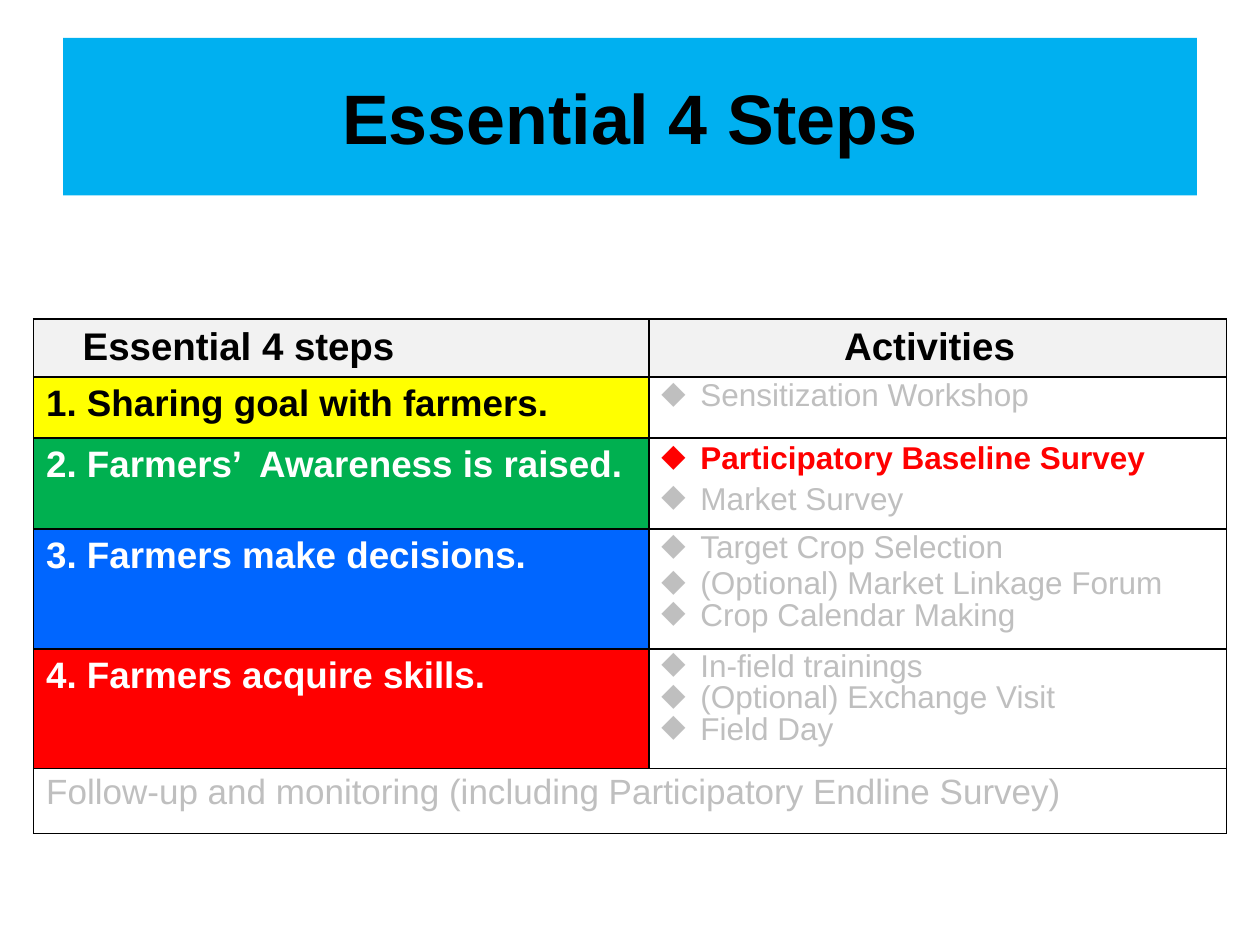
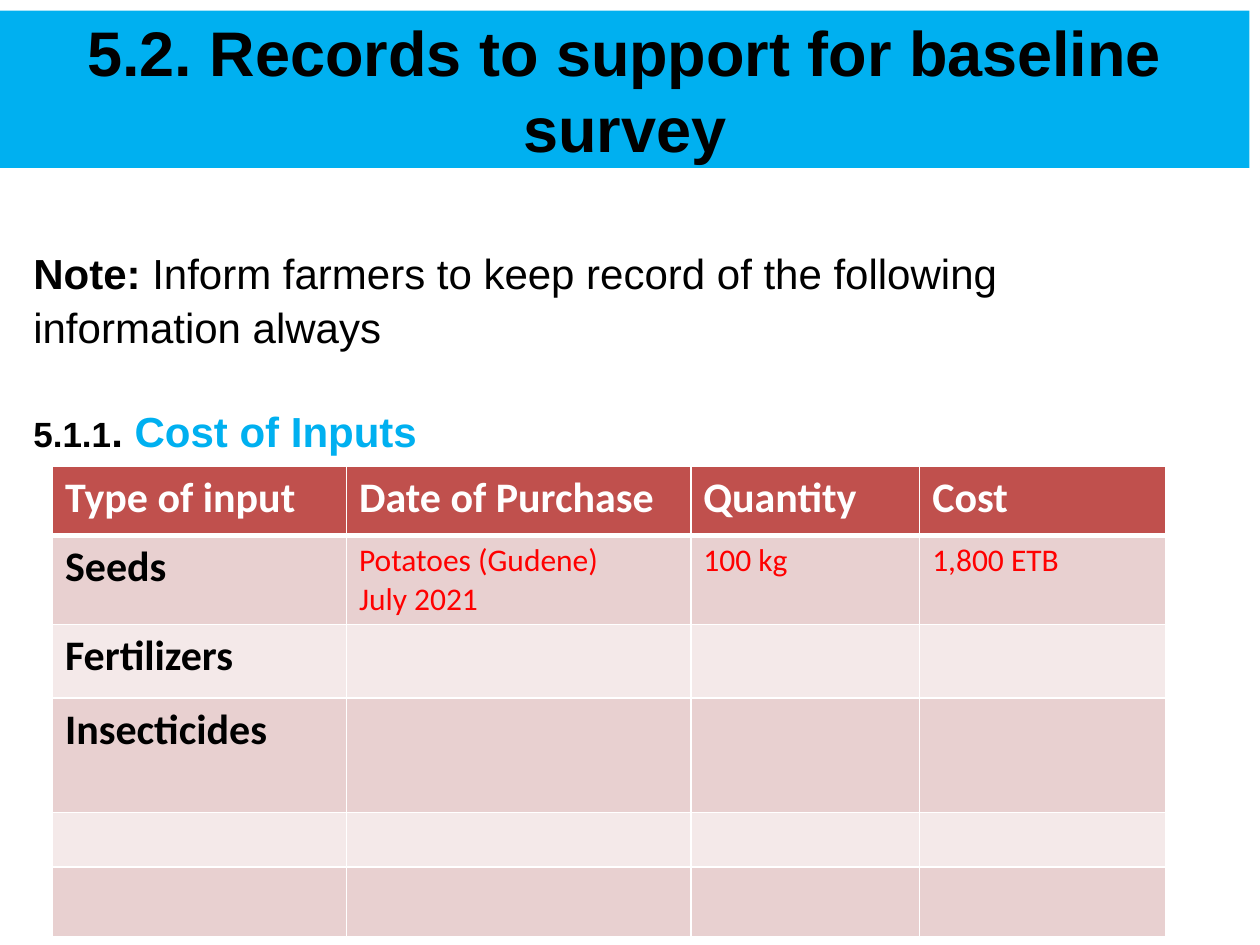
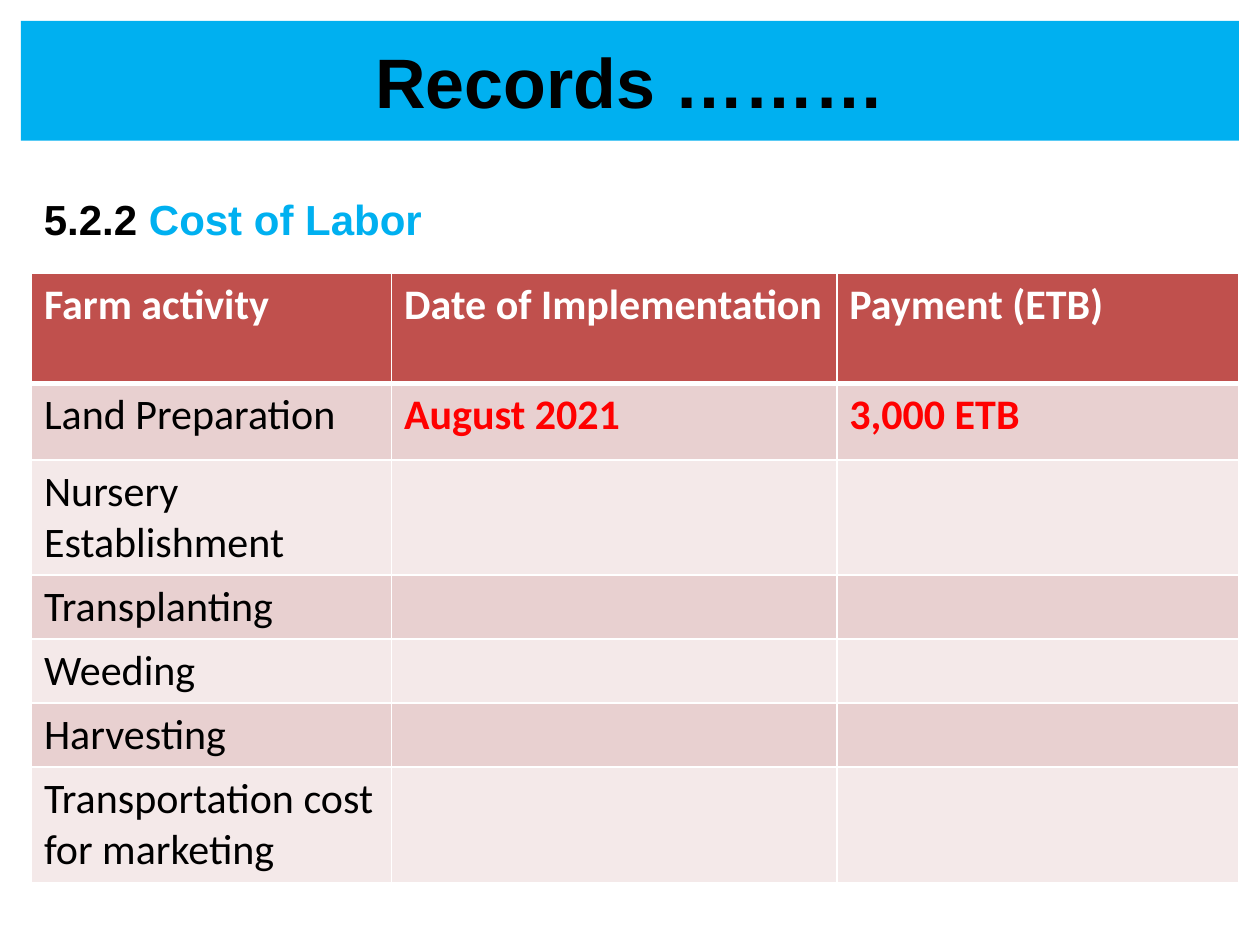
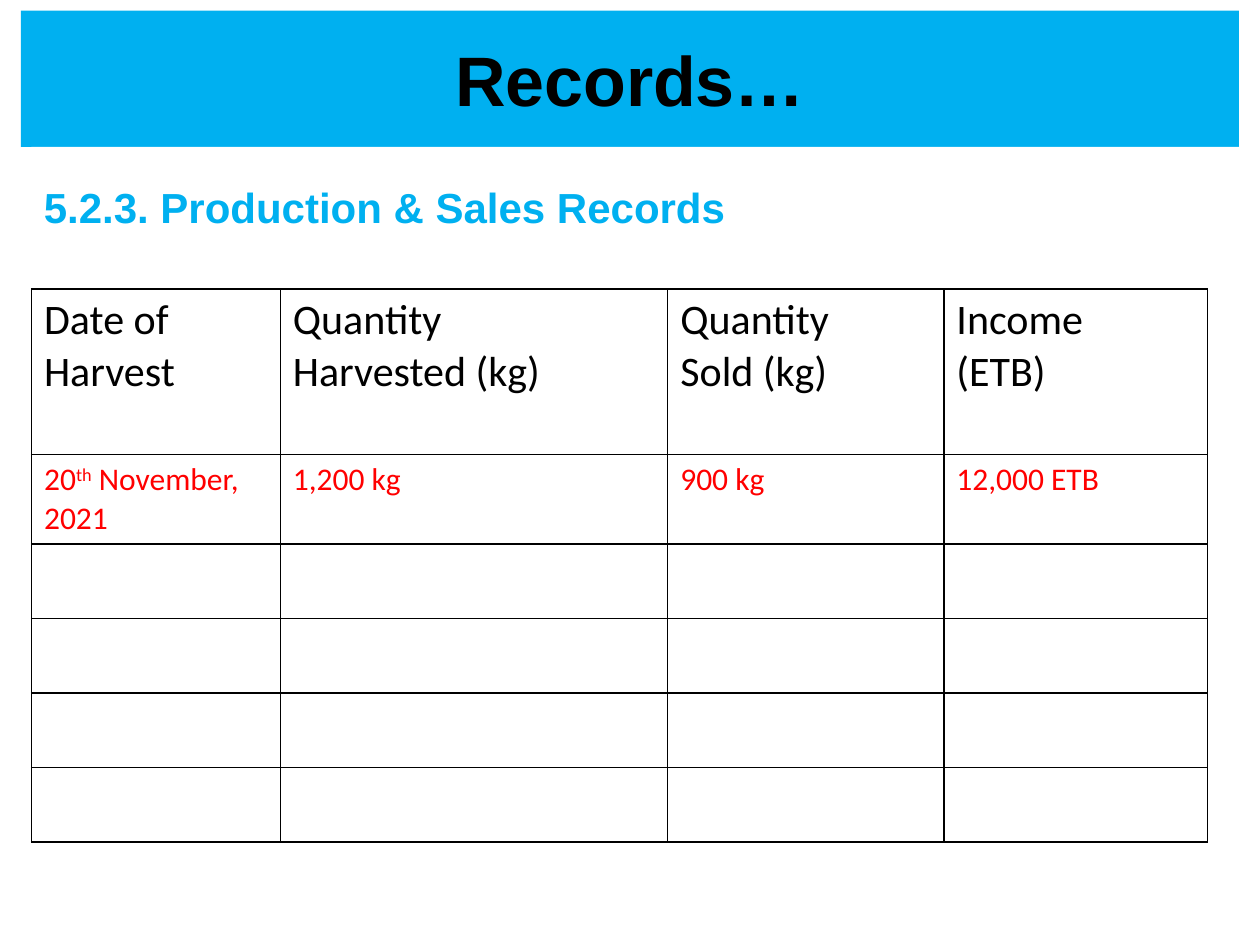
from dataclasses import dataclass

from lxml.etree import SubElement
from pptx import Presentation
from pptx.dml.color import RGBColor
from pptx.enum.shapes import MSO_SHAPE
from pptx.enum.text import MSO_ANCHOR, MSO_AUTO_SIZE, PP_ALIGN
from pptx.oxml.ns import qn
from pptx.util import Emu, Inches, Pt

GRID_COLUMNS, GRID_ROWS = 120, 90
CELL = Inches(10) / GRID_COLUMNS
TITLE_ONLY = 5


@dataclass(frozen=True)
class Theme:
    band: str = "00B0F0"
    black: str = "000000"
    white: str = "FFFFFF"
    sample: str = "FF0000"
    muted: str = "BFBFBF"
    heading_fill: str = "F2F2F2"
    header: str = "C0504D"
    stripe_dark: str = "E8D0D0"
    stripe_light: str = "F4E9E9"
    step_yellow: str = "FFFF00"
    step_green: str = "00B050"
    step_blue: str = "0066FF"
    step_red: str = "FF0000"
    title_font: str = "Arial"
    table_font: str = "Calibri"
    title: float = 40
    long_title: float = 36
    body: float = 24
    step_heading: float = 22
    step: float = 21
    note: float = 20
    small: float = 18


THEME = Theme()


def grid(units):
    return Emu(round(units * CELL))


def place(part, box):
    part.left, part.top, part.width, part.height = map(grid, box)


def paint(part, color):
    part.fill.solid()
    part.fill.fore_color.rgb = RGBColor.from_string(color)


def set_bullet(paragraph, left, hanging, symbol=None):
    properties = paragraph._p.get_or_add_pPr()
    properties.set("marL", str(Inches(left)))
    properties.set("indent", str(Inches(hanging)))
    if symbol:
        SubElement(properties, qn("a:buChar")).set("char", symbol)


def write(frame, text, *, align=PP_ALIGN.LEFT, before=0, line=None,
          indent=None, bullet=None, **font_format):
    """Add one paragraph; text is a string or a list of (string, run format)."""
    paragraph = frame.paragraphs[0]
    if paragraph.runs:
        paragraph = frame.add_paragraph()
    paragraph.alignment = align
    paragraph.space_before = Pt(before)
    if line:
        paragraph.line_spacing = line
    if indent:
        set_bullet(paragraph, *indent, bullet)
    for words, changes in [(text, {})] if isinstance(text, str) else text:
        look = {"font": THEME.title_font, "size": THEME.body,
                "color": THEME.black, "bold": False,
                **font_format, **changes}
        run = paragraph.add_run()
        run.text = words
        run.font.name = look["font"]
        run.font.size = Pt(look["size"])
        run.font.bold = look["bold"]
        run.font.color.rgb = RGBColor.from_string(look["color"])
        if look.get("superscript"):
            run._r.get_or_add_rPr().set("baseline", "30000")


def add_titled_slide(deck, title, box, size=THEME.title):
    slide = deck.slides.add_slide(deck.slide_layouts[TITLE_ONLY])
    band = slide.shapes.title
    place(band, box)
    paint(band, THEME.band)
    band.text_frame.auto_size = MSO_AUTO_SIZE.NONE
    band.text_frame.vertical_anchor = MSO_ANCHOR.MIDDLE
    write(band.text_frame, title, align=PP_ALIGN.CENTER, size=size, bold=True)
    return slide


def add_section_heading(slide, text, top_margin=0.05):
    heading = slide.shapes.add_shape(MSO_SHAPE.RECTANGLE, 0, 0, 0, 0)
    place(heading, (3, 14, 115, 11.4))
    heading.shadow.inherit = False
    paint(heading, THEME.white)
    heading.line.fill.background()
    frame = heading.text_frame
    frame.word_wrap = True
    frame.vertical_anchor = MSO_ANCHOR.MIDDLE
    frame.margin_top = Inches(top_margin)
    write(frame, text, bold=True)


def add_grid_table(slide, left, top, columns, rows):
    frame = slide.shapes.add_table(
        len(rows), len(columns), grid(left), grid(top),
        grid(sum(columns)), grid(sum(rows)))
    table = frame.table
    table.first_row = table.horz_banding = False
    for column, width in zip(table.columns, columns):
        column.width = grid(width)
    for row, height in zip(table.rows, rows):
        row.height = grid(height)
    return table


def style_cell(cell, border, fill=None, bottom=1):
    """Draw the four borders, then the fill, as the schema orders them."""
    properties = cell._tc.get_or_add_tcPr()
    for side, width in zip("LRTB", (1, 1, 1, bottom)):
        edge = SubElement(properties, qn(f"a:ln{side}"), w=str(Pt(width)))
        solid = SubElement(edge, qn("a:solidFill"))
        SubElement(solid, qn("a:srgbClr"), val=border)
    if fill:
        paint(cell, fill)
    else:
        cell.fill.background()


def fill_records(table, records, row_formats, striped=True):
    """Fill a record table; a list in records gives a cell several paragraphs."""
    for r, row in enumerate(table.rows):
        for c, cell in enumerate(row.cells):
            if not striped:
                style_cell(cell, THEME.black)
            elif r == 0:
                style_cell(cell, THEME.white, THEME.header, bottom=3)
            else:
                stripe = THEME.stripe_dark if r % 2 else THEME.stripe_light
                # The thick rule under the header belongs to both rows.
                style_cell(cell, THEME.white, stripe)
            content = records[r][c] if r < len(records) and c < len(records[r]) else []
            for paragraph in [content] if isinstance(content, str) else content:
                write(cell.text_frame, paragraph, font=THEME.table_font,
                      **row_formats(r, c))


def fill_step_cell(cell, fill=None, top_margin=0.05):
    style_cell(cell, THEME.black, fill)
    cell.margin_left = cell.margin_right = cell.margin_bottom = 0
    cell.margin_top = Inches(top_margin)


def add_steps_table(slide, left, top):
    # Each activity: words, exact line height, space before.
    steps = [
        ("1. Sharing goal with farmers.", THEME.step_yellow, THEME.black,
         [("Sensitization Workshop", 18.6, 2)]),
        ("2. Farmers’  Awareness is raised.", THEME.step_green, THEME.white,
         [("Participatory Baseline Survey", 18.6, 3.2),
          ("Market Survey", 22.9, 0)]),
        ("3. Farmers make decisions.", THEME.step_blue, THEME.white,
         [("Target Crop Selection", 18.6, 2),
          ("(Optional) Market Linkage Forum", 18.6, 2),
          ("Crop Calendar Making", 18, 0)]),
        ("4. Farmers acquire skills.", THEME.step_red, THEME.white,
         [("In-field trainings", 18, 0),
          ("(Optional) Exchange Visit", 18, 0),
          ("Field Day", 18, 0)]),
    ]
    current = "Participatory Baseline Survey"
    table = add_grid_table(slide, left, top, [58.6, 55],
                           [5.5, 5.8, 8.7, 11.4, 11.4, 6.2])
    for c, (heading, indent) in enumerate([("Essential 4 steps", 0.39),
                                           ("Activities", 1.55)]):
        cell = table.cell(0, c)
        fill_step_cell(cell, THEME.heading_fill)
        write(cell.text_frame, heading, indent=(indent, 0), before=3.1,
              size=THEME.step_heading, bold=True)
    for r, (step, fill, color, activities) in enumerate(steps, 1):
        step_cell, activity_cell = table.cell(r, 0), table.cell(r, 1)
        fill_step_cell(step_cell, fill)
        write(step_cell.text_frame, step, indent=(0.1, 0), before=3.1,
              size=THEME.step, color=color, bold=True)
        fill_step_cell(activity_cell,
                       top_margin=0.05 if activities[0][0] == current else 0.03)
        for activity, line, before in activities:
            active = activity == current
            write(activity_cell.text_frame, activity, line=Pt(line),
                  before=before, indent=(0.41, -0.31), bullet="◆",
                  size=THEME.small, bold=active,
                  color=THEME.sample if active else THEME.muted)
    last = len(steps) + 1
    follow_up = table.cell(last, 0)
    follow_up.merge(table.cell(last, 1))
    for cell in table.rows[last].cells:
        fill_step_cell(cell, top_margin=0.03)
    write(follow_up.text_frame,
          "Follow-up and monitoring (including Participatory Endline Survey)",
          indent=(0.1, 0), before=3.1, size=THEME.note, color=THEME.muted)


def add_record_note(slide, box):
    note = slide.shapes.add_textbox(0, 0, 0, 0)
    place(note, box)
    frame = note.text_frame
    frame.word_wrap = True
    frame.margin_top = Inches(0.36)
    write(frame, [("Note: ", {"bold": True}),
                  ("Inform farmers to keep record of the following information always", {})],
          line=1.06)
    write(frame, [("5.1.1", {"size": THEME.note}), (". ", {}),
                  ("Cost of Inputs", {"color": THEME.band})],
          before=29, line=1.06, bold=True)


def build_steps_slide(deck):
    slide = add_titled_slide(deck, "Essential 4 Steps", (6, 3.6, 108, 15))
    add_steps_table(slide, 3.2, 30.4)


def build_inputs_slide(deck):
    def look(r, c):
        if r == 0:
            return {"color": THEME.white, "bold": True}
        if c == 0:
            return {"bold": True}
        return {"color": THEME.sample, "size": THEME.small}

    slide = add_titled_slide(deck, "5.2. Records to support for baseline survey",
                             (0, 1, 119, 15), THEME.long_title)
    add_record_note(slide, (2, 19, 114, 65.4))
    table = add_grid_table(slide, 5, 44.4, [28, 32.8, 21.8, 23.4],
                           [6.6, 8.5, 7, 10.9, 5.2, 6.6])
    fill_records(table, [
        ["Type of input", "Date of Purchase", "Quantity", "Cost"],
        ["Seeds", ["Potatoes (Gudene)", "July 2021"], "100 kg", "1,800 ETB"],
        ["Fertilizers"],
        ["Insecticides"],
    ], look)


def build_labor_slide(deck):
    def look(r, c):
        if r == 0:
            return {"color": THEME.white, "bold": True}
        return {"color": THEME.sample, "bold": True} if c else {}

    slide = add_titled_slide(deck, "Records ………", (2, 2, 116, 11.4))
    table = add_grid_table(slide, 3, 26, [34.3, 42.4, 38.3],
                           [10.5, 7.3, 10.9, 6.1, 6.1, 6.1, 10.9])
    fill_records(table, [
        ["Farm activity", "Date of Implementation", "Payment (ETB)"],
        ["Land Preparation", "August 2021", "3,000 ETB"],
        [["Nursery", "Establishment"]],
        ["Transplanting"],
        ["Weeding"],
        ["Harvesting"],
        ["Transportation cost for marketing"],
    ], look)
    add_section_heading(slide, [("5.2.2 ", {}),
                                ("Cost of Labor", {"color": THEME.band})],
                        top_margin=0.24)


def build_sales_slide(deck):
    def look(r, c):
        return {"color": THEME.sample, "size": THEME.small} if r else {}

    slide = add_titled_slide(deck, "Records…", (2, 1, 116, 13))
    table = add_grid_table(slide, 3, 27.5, [23.7, 36.9, 26.3, 25.1],
                           [15.8, 8.5] + [7.1] * 4)
    harvest_date = [("20", {}), ("th", {"superscript": True}),
                    (" November, 2021", {})]
    fill_records(table, [
        [["Date of", "Harvest"], ["Quantity", "Harvested (kg)"],
         ["Quantity", "Sold (kg)"], ["Income", "(ETB)"]],
        [[harvest_date], "1,200 kg", "900 kg", "12,000 ETB"],
    ], look, striped=False)
    add_section_heading(slide, [("5.2.3. Production & Sales Records",
                                 {"color": THEME.band})])


def main():
    deck = Presentation()
    deck.slide_width = grid(GRID_COLUMNS)
    deck.slide_height = grid(GRID_ROWS)
    for build in (build_steps_slide, build_inputs_slide,
                  build_labor_slide, build_sales_slide):
        build(deck)
    deck.save("out.pptx")


if __name__ == "__main__":
    main()
